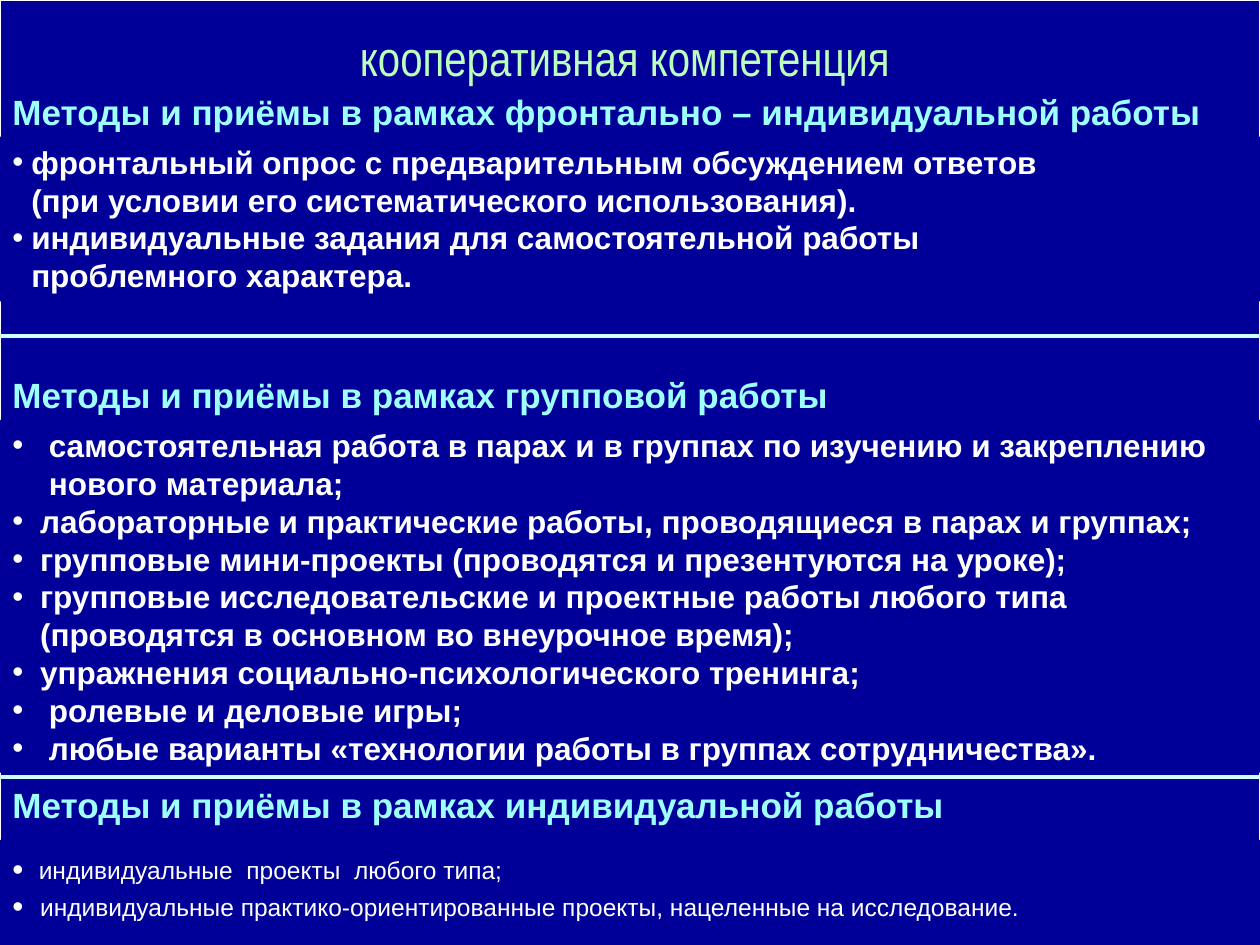
from dataclasses import dataclass

from lxml import etree
from pptx import Presentation
from pptx.dml.color import RGBColor
from pptx.enum.shapes import MSO_CONNECTOR, MSO_SHAPE
from pptx.enum.text import MSO_ANCHOR, MSO_AUTO_SIZE, PP_ALIGN
from pptx.oxml.ns import qn
from pptx.util import Inches, Length, Pt

NAVY = RGBColor(0x00, 0x00, 0x99)
WHITE = RGBColor(0xFF, 0xFF, 0xFF)
MINT = RGBColor(0xBC, 0xFF, 0xBC)
SKY = RGBColor(0x99, 0xCC, 0xFF)
AQUA = RGBColor(0x9E, 0xFF, 0xFF)
PALE_AQUA = RGBColor(0xCC, 0xFF, 0xFF)

RECTANGLE = MSO_SHAPE.RECTANGLE
STRAIGHT = MSO_CONNECTOR.STRAIGHT
TOP = MSO_ANCHOR.TOP
LEFT, CENTER = PP_ALIGN.LEFT, PP_ALIGN.CENTER
NO_AUTO_SIZE = MSO_AUTO_SIZE.NONE

COLUMNS, ROWS = 120, 90
SLIDE_WIDTH, SLIDE_HEIGHT = Inches(10), Inches(7.5)
BULLET_SIZE = 18
LINE_PITCH = Pt(21.6)


@dataclass(frozen=True)
class Area:
    column: float
    row: float
    columns: float
    rows: float

    def box(self) -> tuple[Length, Length, Length, Length]:
        return (across(self.column), down(self.row),
                across(self.columns), down(self.rows))


@dataclass(frozen=True)
class Item:
    text: str
    indent: float


@dataclass(frozen=True)
class Section:
    heading: str
    heading_area: Area
    panel_area: Area
    items: tuple[Item, ...]
    size: int = 18
    bold: bool = True


SECTIONS = (
    Section(
        "Методы и приёмы в рамках фронтально – индивидуальной работы",
        Area(0, 8, 115.6, 5.2), Area(0, 13, COLUMNS, 15.7),
        (
            Item("фронтальный опрос с предварительным обсуждением ответов\v"
                 "(при условии его систематического использования).", 0.15),
            Item("индивидуальные задания для самостоятельной работы\v"
                 "проблемного характера.", 0.15),
        ),
    ),
    Section(
        "Методы и приёмы в рамках групповой работы",
        Area(0, 35, 80.3, 5.2), Area(0, 40, COLUMNS, 33.6),
        (
            Item("самостоятельная работа в парах и в группах по изучению и закреплению\v"
                 "нового материала;", 0.29),
            Item("лабораторные и практические работы, проводящиеся в парах и группах;", 0.22),
            Item("групповые мини-проекты (проводятся и презентуются на уроке);", 0.22),
            Item("групповые исследовательские и проектные работы любого типа\v"
                 "(проводятся в основном во внеурочное время);", 0.22),
            Item("упражнения социально-психологического тренинга;", 0.22),
            Item("ролевые и деловые игры;", 0.29),
            Item("любые варианты «технологии работы в группах сотрудничества».", 0.29),
        ),
    ),
    Section(
        "Методы и приёмы в рамках индивидуальной работы",
        Area(0, 74, 91.2, 5.2), Area(0, 80, COLUMNS, 11.2),
        (
            Item("индивидуальные  проекты  любого типа;", 0.21),
            Item("индивидуальные практико-ориентированные проекты, "
                 "нацеленные на исследование.", 0.22),
        ),
        size=14, bold=False,
    ),
)
DIVIDER_ROWS = (32, 74)


def across(columns: float) -> Length:
    return Length(round(SLIDE_WIDTH * columns / COLUMNS))


def down(rows: float) -> Length:
    return Length(round(SLIDE_HEIGHT * rows / ROWS))


def write_text(paragraph, text: str, *, size: int, color: RGBColor,
               bold: bool = False, font: str = "Arial",
               alignment: PP_ALIGN = LEFT) -> None:
    paragraph.text = text
    paragraph.alignment = alignment
    for run in paragraph.runs:
        run.font.size = Pt(size)
        run.font.name = font
        run.font.bold = bold
        run.font.color.rgb = color


def prepare_frame(shape, *, wrap: bool):
    frame = shape.text_frame
    frame.auto_size = NO_AUTO_SIZE
    frame.word_wrap = wrap
    frame.vertical_anchor = TOP
    return frame


def add_bullet(paragraph, indent: float, text_size: int) -> None:
    properties = paragraph._p.get_or_add_pPr()
    properties.set("marL", str(Inches(indent)))
    properties.set("indent", str(-Inches(indent)))
    percent = round(BULLET_SIZE / text_size * 100) * 1000
    etree.SubElement(properties, qn("a:buSzPct"), val=str(percent))
    etree.SubElement(properties, qn("a:buFont"), typeface="Arial")
    etree.SubElement(properties, qn("a:buChar"), char="•")


def add_rectangle(slide, area: Area):
    shape = slide.shapes.add_shape(RECTANGLE, *area.box())
    shape.shadow.inherit = False
    shape.fill.solid()
    shape.fill.fore_color.rgb = NAVY
    shape.line.fill.background()
    return shape


def place_title(slide, text: str, area: Area) -> None:
    title = slide.shapes.title
    title.left, title.top, title.width, title.height = area.box()
    paragraph = prepare_frame(title, wrap=False).paragraphs[0]
    write_text(paragraph, text, size=28, color=MINT,
               font="Arial Narrow", alignment=CENTER)
    outline = etree.Element(qn("a:ln"), w=str(Pt(1.5)))
    fill = etree.SubElement(outline, qn("a:solidFill"))
    etree.SubElement(fill, qn("a:srgbClr"), val=str(SKY))
    paragraph.runs[0].font._element.insert(0, outline)


def add_section(slide, section: Section) -> None:
    heading = slide.shapes.add_textbox(*section.heading_area.box())
    write_text(prepare_frame(heading, wrap=False).paragraphs[0],
               section.heading, size=20, color=AQUA, bold=True)
    frame = prepare_frame(add_rectangle(slide, section.panel_area), wrap=True)
    for index, item in enumerate(section.items):
        paragraph = frame.add_paragraph() if index else frame.paragraphs[0]
        write_text(paragraph, item.text, size=section.size,
                   color=WHITE, bold=section.bold)
        paragraph.line_spacing = LINE_PITCH
        add_bullet(paragraph, item.indent, section.size)


def add_divider(slide, row: float) -> None:
    line = slide.shapes.add_connector(
        STRAIGHT, 0, down(row), SLIDE_WIDTH, down(row))
    line.line.color.rgb = PALE_AQUA
    line.line.width = Pt(2.25)
    etree.SubElement(line._element.spPr, qn("a:effectLst"))


def main() -> None:
    presentation = Presentation()
    presentation.slide_width = SLIDE_WIDTH
    presentation.slide_height = SLIDE_HEIGHT
    slide = presentation.slides.add_slide(
        presentation.slide_layouts.get_by_name("Title Only"))
    slide.background.fill.solid()
    slide.background.fill.fore_color.rgb = NAVY
    frame = add_rectangle(slide, Area(0, 0, COLUMNS, ROWS))
    frame.line.color.rgb = WHITE
    frame.line.width = Pt(0.75)
    slide.shapes._spTree.insert(2, frame._element)
    place_title(slide, "кооперативная компетенция", Area(2, 2, 115, 5.6))
    for section in SECTIONS:
        add_section(slide, section)
    for row in DIVIDER_ROWS:
        add_divider(slide, row)
    presentation.save("out.pptx")


if __name__ == "__main__":
    main()
